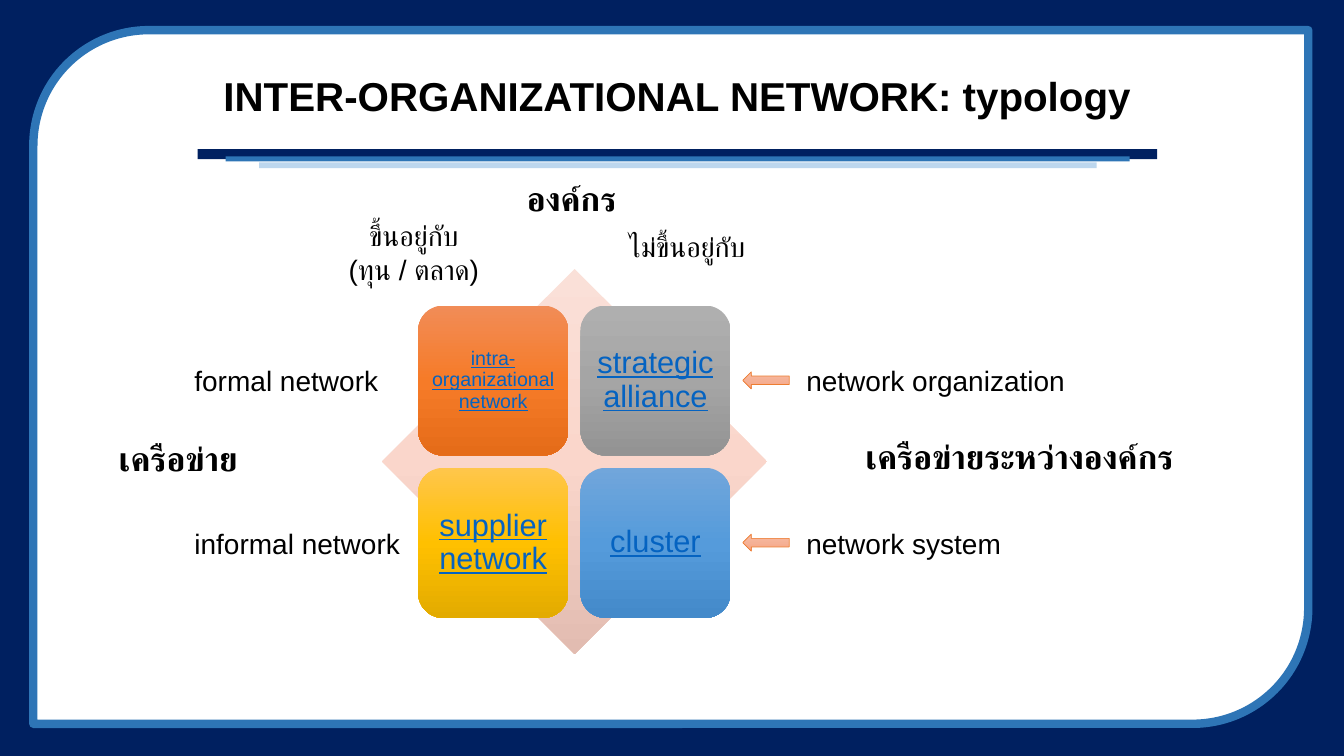
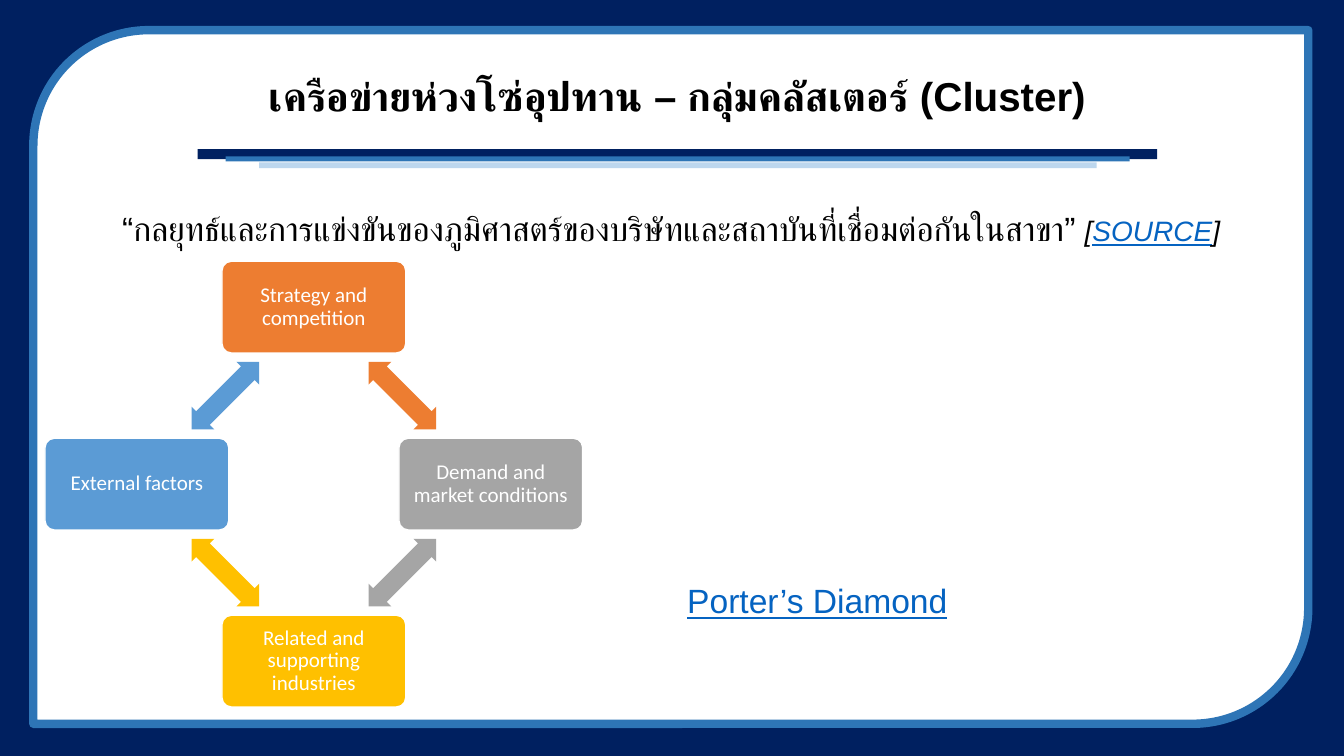
from lxml import etree
from pptx import Presentation
from pptx.dml.color import RGBColor
from pptx.enum.shapes import MSO_SHAPE
from pptx.enum.text import MSO_ANCHOR, MSO_AUTO_SIZE, PP_ALIGN
from pptx.oxml.ns import qn
from pptx.util import Cm, Pt

RECT = MSO_SHAPE.RECTANGLE
ROUND = MSO_SHAPE.ROUNDED_RECTANGLE
PANEL = MSO_SHAPE.ROUND_2_DIAG_RECTANGLE
DIAMOND = MSO_SHAPE.DIAMOND
LEFT_ARROW = MSO_SHAPE.LEFT_ARROW
TWO_WAY = MSO_SHAPE.LEFT_RIGHT_ARROW
MIDDLE = MSO_ANCHOR.MIDDLE
FIXED = MSO_AUTO_SIZE.NONE
GROW = MSO_AUTO_SIZE.SHAPE_TO_FIT_TEXT
LEFT = PP_ALIGN.LEFT
CENTER = PP_ALIGN.CENTER

NAVY, BLUE, PALE = "002060", "2E75B6", "BDD7EE"
WHITE, BLACK, LINK = "FFFFFF", "000000", "0563C1"
ORANGE, GRAY, GOLD, SKY = "ED7D31", "A5A5A5", "FFC000", "5B9BD5"
PITCH = 4.09


def color(code):
    return RGBColor.from_string(code)


def write(frame, text, size=20, tint=BLACK, font="Arial", bold=False,
          italic=False, under=False, align=LEFT, lead=1.0, more=False):
    for row, line in enumerate(text.split("\n")):
        if row:
            par = frame.add_paragraph()
        else:
            par = frame.paragraphs[-1]
        if not more:
            par.alignment = align
            par.line_spacing = lead
            par.space_before = Pt(0)
        run = par.add_run()
        run.text = line
        face = run.font
        face.size = Pt(size)
        face.bold, face.italic, face.underline = bold, italic, under
        face.color.rgb = color(tint)
        face.name = font
        props = run._r.get_or_add_rPr()
        etree.SubElement(props, qn("a:cs"), typeface=font)


def place(item, left, top, width, height):
    item.left, item.top = Cm(left), Cm(top)
    item.width, item.height = Cm(width), Cm(height)


def blend(shape, tints):
    shape.fill.gradient()
    shape.fill.gradient_angle = 270
    stops = shape.element.spPr.find(".//" + qn("a:gsLst"))
    for stop in list(stops):
        stops.remove(stop)
    for rank, tint in enumerate(tints):
        stop = etree.SubElement(stops, qn("a:gs"), pos=str(rank * 50000))
        etree.SubElement(stop, qn("a:srgbClr"), val=tint)


def draw(slide, kind, box, fill, line=None, weight=1, adjust=()):
    shape = slide.shapes.add_shape(kind, *map(Cm, box))
    shape.shadow.inherit = False
    if isinstance(fill, str):
        shape.fill.solid()
        shape.fill.fore_color.rgb = color(fill)
    else:
        blend(shape, fill)
    if line:
        shape.line.color.rgb = color(line)
        shape.line.width = Pt(weight)
    else:
        shape.line.fill.background()
    for rank, value in enumerate(adjust):
        shape.adjustments[rank] = value
    return shape


def inset(shape, text, pad, **form):
    frame = shape.text_frame
    frame.word_wrap = True
    frame.auto_size = FIXED
    frame.vertical_anchor = MIDDLE
    frame.margin_left = frame.margin_right = Cm(pad)
    frame.margin_top = frame.margin_bottom = Cm(pad)
    write(frame, text, align=CENTER, lead=0.9, **form)


def label(slide, text, box, wrap=False, **form):
    frame = slide.shapes.add_textbox(*map(Cm, box)).text_frame
    frame.word_wrap = wrap
    frame.auto_size = GROW
    write(frame, text, **form)


def head(slide, text):
    title = slide.shapes.title
    place(title, 4.98, 1.24, 24.18, 2.46)
    title.text_frame.auto_size = FIXED
    title.text_frame.vertical_anchor = MIDDLE
    write(title.text_frame, text, size=28.8, bold=True, align=CENTER, lead=0.9)


def theme(master, slide):
    master.background.fill.solid()
    master.background.fill.fore_color.rgb = color(NAVY)
    parts = [draw(slide, PANEL, (0.84, 0.76, 32.13, 17.48), WHITE, BLUE, 6)]
    for box, tint in (((4.98, 3.76, 24.18, 0.25), NAVY),
                      ((5.69, 3.94, 22.78, 0.13), BLUE),
                      ((6.53, 4.09, 21.11, 0.15), PALE)):
        parts.append(draw(slide, RECT, box, tint))
    for rank, part in enumerate(parts):
        part.element.nvSpPr.cNvPr.set("id", str(20 + rank))
        master.shapes.element.insert(2 + rank, part.element)


def matrix(slide):
    draw(slide, DIAMOND, (9.63, 6.78, 9.7, 9.7), ("FAE0D8", "FAD6CB", "E2BCB1"))
    tiles = (
        ("intra-organizational network", 14, 0.15, ("F18C57", "F67B28", "E56C19")),
        ("strategic alliance", 22, 0.23, ("AFAFAF", "A5A5A5", "939393")),
        ("supplier network", 22, 0.23, ("FFC64B", "FFC000", "E3AB00")),
        ("cluster", 22, 0.23, ("71A6DB", "559BDB", "448ACA")),
    )
    for rank, (text, size, pad, tints) in enumerate(tiles):
        row, col = divmod(rank, 2)
        box = (10.54 + col * PITCH, 7.7 + row * PITCH, 3.78, 3.78)
        tile = draw(slide, ROUND, box, tints)
        inset(tile, text, pad, size=size, tint=LINK, under=True)


def typology(slide):
    head(slide, "INTER-ORGANIZATIONAL NETWORK: typology")
    matrix(slide)
    for text, left, top, width in (("องค์กร", 13.03, 4.37, 2.92),
                                   ("เครือข่าย", 2.74, 10.9, 3.84),
                                   ("เครือข่ายระหว่างองค์กร", 21.56, 10.85, 8.89)):
        label(slide, text, (left, top, width, 1.27), size=24, bold=True)
    label(slide, "ขึ้นอยู่กับ\n(ทุน / ตลาด)", (8.46, 5.38, 3.94, 1.96), align=CENTER)
    label(slide, "ไม่ขึ้นอยู่กับ", (15.6, 5.66, 3.61, 1.12))
    rows = (("formal network", 5.18, "network organization", 7.09),
            ("informal network", 5.74, "network system", 5.46))
    for row, (near, wide, far, span) in enumerate(rows):
        drop = row * PITCH
        label(slide, near, (4.65, 9.04 + drop, wide, 1.12))
        label(slide, far, (20.07, 9.04 + drop, span, 1.12))
        draw(slide, LEFT_ARROW, (18.72, 9.37 + drop, 1.17, 0.43),
             ("F7BDA5", "F5B196", "F8A582"), ORANGE, 0.5)


def quote(body):
    place(body, 2.82, 5.23, 28.19, 2.46)
    frame = body.text_frame
    frame.auto_size = FIXED
    props = frame.paragraphs[0]._p.get_or_add_pPr()
    props.set("marL", "0")
    props.set("indent", "0")
    etree.SubElement(props, qn("a:buNone"))
    write(frame, "“กลยุทธ์และการแข่งขันของภูมิศาสตร์ของบริษัทและสถาบันที่เชื่อมต่อกันในสาขา” ",
          size=24, align=CENTER, lead=0.9)
    write(frame, "[", italic=True, more=True)
    write(frame, "SOURCE", italic=True, tint=LINK, under=True, more=True)
    write(frame, "]", italic=True, more=True)


def cycle(slide, mid_x, mid_y, reach):
    wide, high = 4.63, 2.31
    span, thick = 2.41, 0.81
    nodes = (("Strategy and competition", ORANGE, 0, -1),
             ("Demand and market conditions", GRAY, 1, 0),
             ("Related and supporting industries", GOLD, 0, 1),
             ("External factors", SKY, -1, 0))
    for rank, (text, tint, dx, dy) in enumerate(nodes):
        box = (mid_x + dx * reach - wide / 2, mid_y + dy * reach - high / 2, wide, high)
        node = draw(slide, ROUND, box, tint, WHITE, 1, (0.1,))
        inset(node, text, 0.15, size=15, tint=WHITE, font="Calibri")
        half = reach / 2
        box = (mid_x + (dx - dy) * half - span / 2,
               mid_y + (dx + dy) * half - thick / 2, span, thick)
        arrow = draw(slide, TWO_WAY, box, tint, adjust=(0.6, 0.5))
        arrow.rotation = 45 + 90 * rank


def cluster(slide):
    head(slide, "เครือข่ายห่วงโซ่อุปทาน – กลุ่มคลัสเตอร์ (Cluster)")
    quote(slide.placeholders[1])
    cycle(slide, 7.91, 12.2, 4.46)
    label(slide, "Porter’s Diamond", (17.07, 14.5, 14.35, 1.27), wrap=True,
          size=24, tint=LINK, under=True)


def main():
    deck = Presentation()
    deck.slide_width, deck.slide_height = Cm(33.87), Cm(19.05)
    first = deck.slides.add_slide(deck.slide_layouts[5])
    theme(deck.slide_master, first)
    typology(first)
    cluster(deck.slides.add_slide(deck.slide_layouts[1]))
    deck.save("out.pptx")


if __name__ == "__main__":
    main()
